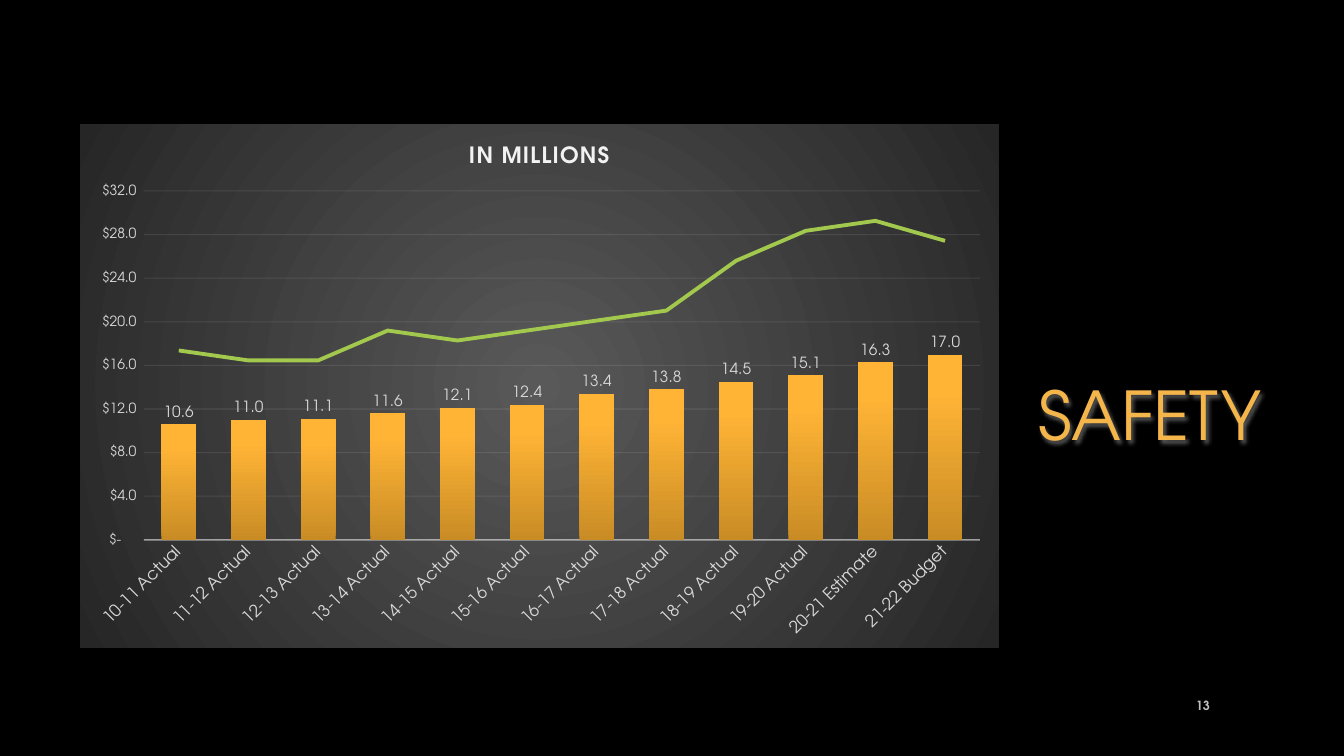
from lxml import etree
from pptx import Presentation
from pptx.chart.data import CategoryChartData
from pptx.dml.color import RGBColor
from pptx.enum.chart import XL_CHART_TYPE, XL_LABEL_POSITION, XL_MARKER_STYLE, XL_TICK_MARK
from pptx.enum.text import MSO_ANCHOR, PP_ALIGN
from pptx.oxml import parse_xml
from pptx.oxml.ns import nsdecls, qn
from pptx.util import Pt

COLUMNS = XL_CHART_TYPE.COLUMN_CLUSTERED
OUTSIDE_END = XL_LABEL_POSITION.OUTSIDE_END
NO_MARKER, NO_TICK = XL_MARKER_STYLE.NONE, XL_TICK_MARK.NONE
BOTTOM, MIDDLE = MSO_ANCHOR.BOTTOM, MSO_ANCHOR.MIDDLE
CENTER, RIGHT = PP_ALIGN.CENTER, PP_ALIGN.RIGHT

# Content
HEADING = "SAFETY"
PAGE_NUMBER = "13"
CHART_TITLE = "IN MILLIONS"
YEARS = [  # year, safety in millions, line value in millions
    ("10-11 Actual", 10.6, 19),
    ("11-12 Actual", 11.0, 18),
    ("12-13 Actual", 11.1, 18),
    ("13-14 Actual", 11.6, 21),
    ("14-15 Actual", 12.1, 20),
    ("15-16 Actual", 12.4, 21),
    ("16-17 Actual", 13.4, 22),
    ("17-18 Actual", 13.8, 23),
    ("18-19 Actual", 14.5, 28),
    ("19-20 Actual", 15.1, 31),
    ("20-21 Estimate", 16.3, 32),
    ("21-22 Budget", 17.0, 30),
]
MILLION = 1_000_000
DOLLARS = r'_("$"* #,##0.0_);_("$"* \(#,##0.0\);_("$"* "-"??_);_(@_)'

THEME = {
    "font": "TeX Gyre Adventor",
    "background": "000000", "heading": "F4B54B", "shadow": "595959", "number": "BFBFBF",
    "text": "D9D9D9", "rule": "F2F2F2", "line": "A2C84E",
    "panel": [(0, "595959"), (100, "262626")],
    "column": [(0, "C98C25"), (80, "FFB436"), (100, "FFB538")],
    "heading_size": 48, "number_size": 9, "title_size": 16,
    "category_size": 12, "label_size": 11, "value_size": 10,
}

# Geometry in px: left, top, width, height
EMU_PER_PX = 914400 / 100.8
SLIDE_SIZE = (1344, 756)
HEADING_BOX = (964, 57, 371, 402)
NUMBER_BOX = (1160, 685, 60, 40)
CHART_BOX = (80, 124, 919, 524)
PLOT_BOX = (144, 191, 836, 349)
TITLE_CORNER = (465, 140)


def px(*lengths):
    return [round(length * EMU_PER_PX) for length in lengths]


def style_font(font, size, color, bold=False):
    font.name, font.size, font.bold = THEME["font"], Pt(size), bold
    font.color.rgb = RGBColor.from_string(color)


def add_text(slide, box, text, size, color, align, anchor, bold=False):
    shape = slide.shapes.add_textbox(*px(*box))
    frame = shape.text_frame
    frame.word_wrap, frame.vertical_anchor = True, anchor
    paragraph = frame.paragraphs[0]
    paragraph.alignment = align
    run = paragraph.add_run()
    run.text = text
    style_font(run.font, size, color, bold)
    return shape


def gradient(stops, direction):
    marks = "".join(f'<a:gs pos="{position * 1000}"><a:srgbClr val="{color}"/></a:gs>'
                    for position, color in stops)
    return f'<a:gradFill {nsdecls("a")}><a:gsLst>{marks}</a:gsLst>{direction}</a:gradFill>'


def style_line(line, color, width, opacity=100):
    line.color.rgb = RGBColor.from_string(color)
    line.width = Pt(width)
    if opacity < 100:
        fill_color = line.fill._xPr.find(".//" + qn("a:srgbClr"))
        etree.SubElement(fill_color, qn("a:alpha"), val=str(opacity * 1000))


def manual_layout(left, top, width=None, height=None):
    chart_left, chart_top, chart_width, chart_height = CHART_BOX
    parts = [("xMode", "edge"), ("yMode", "edge"),
             ("x", round((left - chart_left) / chart_width, 4)),
             ("y", round((top - chart_top) / chart_height, 4))]
    if width:
        parts.insert(0, ("layoutTarget", "inner"))
        parts += [("w", round(width / chart_width, 4)), ("h", round(height / chart_height, 4))]
    inner = "".join(f'<c:{name} val="{value}"/>' for name, value in parts)
    return parse_xml(f'<c:layout {nsdecls("c")}><c:manualLayout>{inner}</c:manualLayout></c:layout>')


def set_layout(parent, layout, after=None):
    for old in parent.findall(qn("c:layout")):
        parent.remove(old)
    if after is None:
        parent.insert(0, layout)
    else:
        after.addnext(layout)


def move_to_second_axis(chart):
    """Turn the second column series into a line with its own axes."""
    plot_area = chart._chartSpace.chart.plotArea
    columns = plot_area.find(qn("c:barChart"))
    series = columns.findall(qn("c:ser"))[1]
    for flag in series.findall(qn("c:invertIfNegative")):
        series.remove(flag)
    line_chart = parse_xml(
        f'<c:lineChart {nsdecls("c")}><c:grouping val="standard"/><c:varyColors val="0"/>'
        '<c:marker val="1"/><c:axId val="50010"/><c:axId val="50020"/></c:lineChart>')
    line_chart.insert(2, series)
    columns.addnext(line_chart)
    value_axis = parse_xml(
        f'<c:valAx {nsdecls("c", "a")}><c:axId val="50020"/><c:scaling>'
        f'<c:orientation val="minMax"/><c:max val="{35 * MILLION}"/><c:min val="0"/></c:scaling>'
        '<c:delete val="0"/><c:axPos val="r"/><c:numFmt formatCode="General" sourceLinked="0"/>'
        '<c:majorTickMark val="out"/><c:minorTickMark val="none"/><c:tickLblPos val="none"/>'
        '<c:spPr><a:ln><a:noFill/></a:ln></c:spPr>'
        '<c:crossAx val="50010"/><c:crosses val="max"/></c:valAx>')
    category_axis = parse_xml(
        f'<c:catAx {nsdecls("c")}><c:axId val="50010"/><c:scaling>'
        '<c:orientation val="minMax"/></c:scaling><c:delete val="1"/><c:axPos val="b"/>'
        '<c:crossAx val="50020"/><c:crosses val="autoZero"/></c:catAx>')
    plot_area.find(qn("c:valAx")).addnext(value_axis)
    value_axis.addnext(category_axis)


def add_chart(slide):
    data = CategoryChartData()
    data.categories = [year for year, _, _ in YEARS]
    data.add_series("Series 1", [safety for _, safety, _ in YEARS])
    data.add_series("Series 2", [value * MILLION for _, _, value in YEARS])
    chart = slide.shapes.add_chart(COLUMNS, *px(*CHART_BOX), data).chart
    chart.has_legend = False
    style_font(chart.font, THEME["value_size"], THEME["text"])
    chart_space = chart._chartSpace

    # Panel and plot position
    centre = '<a:path path="circle"><a:fillToRect l="50000" t="50000" r="50000" b="50000"/></a:path>'
    panel = parse_xml(f'<c:spPr {nsdecls("c", "a")}>{gradient(THEME["panel"], centre)}'
                      '<a:ln><a:noFill/></a:ln></c:spPr>')
    chart_space.chart.addnext(panel)
    set_layout(chart_space.chart.plotArea, manual_layout(*PLOT_BOX))

    # Title
    chart.has_title = True
    run = chart.chart_title.text_frame.paragraphs[0].add_run()
    run.text = CHART_TITLE
    style_font(run.font, THEME["title_size"], THEME["rule"], True)
    run._r.get_or_add_rPr().set("spc", "100")
    title = chart_space.chart.find(qn("c:title"))
    set_layout(title, manual_layout(*TITLE_CORNER), title.find(qn("c:tx")))

    # Left and bottom axes, styled while they are the only ones
    categories, values = chart.category_axis, chart.value_axis
    for axis, size in ((categories, THEME["category_size"]), (values, THEME["value_size"])):
        axis.major_tick_mark = axis.minor_tick_mark = NO_TICK
        style_font(axis.tick_labels.font, size, THEME["text"])
    style_line(categories.format.line, THEME["rule"], 1, 54)
    categories._element.find(qn("c:txPr")).find(qn("a:bodyPr")).set("rot", "-2700000")
    values.minimum_scale, values.maximum_scale, values.major_unit = 0, 32, 4
    values.format.line.fill.background()
    values.tick_labels.number_format = DOLLARS
    values.tick_labels.number_format_is_linked = False
    style_line(values.major_gridlines.format.line, THEME["rule"], 0.75, 10)

    # Columns with value labels
    move_to_second_axis(chart)
    column_plot, line_plot = chart.plots
    column_plot.gap_width, column_plot.vary_by_categories = 100, False
    columns = column_plot.series[0]
    columns.format.fill.solid()
    solid = columns._element.find(qn("c:spPr")).find(qn("a:solidFill"))
    upward = '<a:lin ang="16200000" scaled="0"/>'
    solid.getparent().replace(solid, parse_xml(gradient(THEME["column"], upward)))
    labels = columns.data_labels
    labels.show_value, labels.position = True, OUTSIDE_END
    labels.number_format, labels.number_format_is_linked = "#,##0.0", False
    style_font(labels.font, THEME["label_size"], THEME["text"])

    # Line
    line = line_plot.series[0]
    line.smooth, line.marker.style = False, NO_MARKER
    style_line(line.format.line, THEME["line"], 2.75)


def main():
    presentation = Presentation()
    presentation.slide_width, presentation.slide_height = px(*SLIDE_SIZE)
    slide = presentation.slides.add_slide(presentation.slide_layouts[6])
    slide.background.fill.solid()
    slide.background.fill.fore_color.rgb = RGBColor.from_string(THEME["background"])

    # Heading with a soft shadow, and page number
    heading = add_text(slide, HEADING_BOX, HEADING, THEME["heading_size"], THEME["heading"],
                       CENTER, BOTTOM)
    heading._element.spPr.append(parse_xml(
        f'<a:effectLst {nsdecls("a")}><a:outerShdw blurRad="38100" dist="25400" dir="2700000">'
        f'<a:srgbClr val="{THEME["shadow"]}"/></a:outerShdw></a:effectLst>'))
    number = add_text(slide, NUMBER_BOX, PAGE_NUMBER, THEME["number_size"], THEME["number"],
                      RIGHT, MIDDLE, True)
    number.text_frame.paragraphs[0].space_after = Pt(6)

    add_chart(slide)
    presentation.save("out.pptx")


if __name__ == "__main__":
    main()
